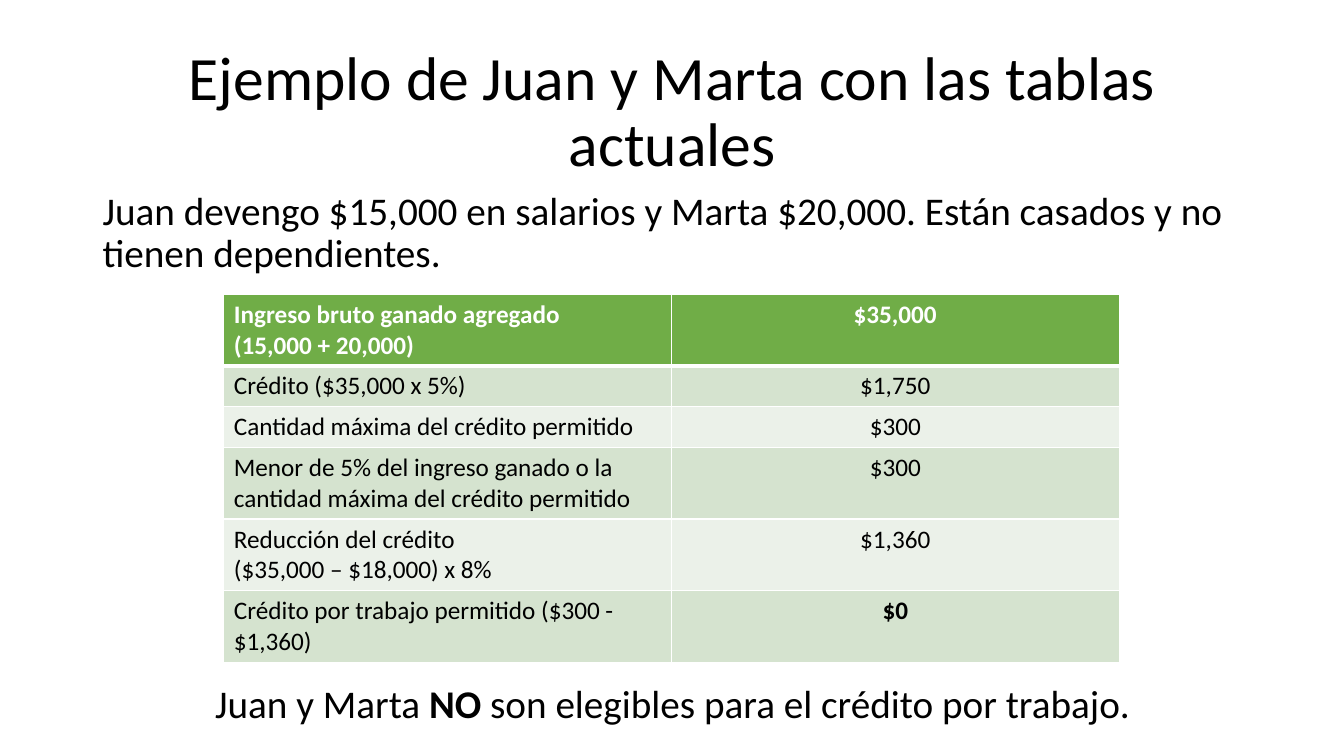
import pptx
import pptx.dml.color
import pptx.enum.text
import pptx.oxml.ns
import pptx.util
from lxml import etree
from pptx.util import Inches

COLORS = {
    "text": "000000",
    "white": "FFFFFF",
    "header": "70AD47",
    "odd": "D5E3CF",
    "even": "EBF1E9",
}
FONT = "Calibri"
LEFT = pptx.enum.text.PP_ALIGN.LEFT
CENTER = pptx.enum.text.PP_ALIGN.CENTER
TOP = pptx.enum.text.MSO_ANCHOR.TOP
MIDDLE = pptx.enum.text.MSO_ANCHOR.MIDDLE

ROWS = [
    (["Ingreso bruto ganado agregado", "(15,000 + 20,000)"], "$35,000"),
    (["Crédito ($35,000 x 5%)"], "$1,750"),
    (["Cantidad máxima del crédito permitido"], "$300"),
    (["Menor de 5% del ingreso ganado o la cantidad máxima del crédito permitido"], "$300"),
    (["Reducción del crédito", "($35,000 – $18,000) x 8%"], "$1,360"),
    (["Crédito por trabajo permitido ($300 - $1,360)"], "$0"),
]


def rgb(name):
    return pptx.dml.color.RGBColor.from_string(COLORS[name])


def write(para, text, size=28, color="text", bold=False, align=LEFT, spacing=1.0):
    para.alignment = align
    para.line_spacing = spacing
    span = para.add_run()
    span.text = text
    span.font.name = FONT
    span.font.size = pptx.util.Pt(size)
    span.font.bold = bold
    span.font.color.rgb = rgb(color)


def add_text(page, left, top, width, height, spans, anchor=TOP, **style):
    """Place one paragraph made of (text, bold) spans in a box."""
    box = page.shapes.add_textbox(Inches(left), Inches(top), Inches(width), Inches(height))
    frame = box.text_frame
    frame.word_wrap = True
    frame.vertical_anchor = anchor
    for text, bold in spans:
        write(frame.paragraphs[0], text, bold=bold, spacing=0.9, **style)


def add_borders(cell, top=1, bottom=1):
    properties = cell._tc.get_or_add_tcPr()
    for side, points in (("L", 1), ("R", 1), ("T", top), ("B", bottom)):
        line = etree.SubElement(properties, pptx.oxml.ns.qn(f"a:ln{side}"),
                                w=str(pptx.util.Pt(points)))
        fill = etree.SubElement(line, pptx.oxml.ns.qn("a:solidFill"))
        etree.SubElement(fill, pptx.oxml.ns.qn("a:srgbClr"), val=COLORS["white"])


def add_credit_table(page, left, top, width):
    line_height, padding = 0.305, 0.1
    heights = [line_height * (2 if len(label) > 1 or len(label[0]) > 40 else 1) + padding
               for label, amount in ROWS]
    frame = page.shapes.add_table(len(ROWS), 2, Inches(left), Inches(top),
                                  Inches(width), Inches(sum(heights)))
    table = frame.table
    for column in table.columns:
        column.width = Inches(width / 2)
    for index, (label, amount) in enumerate(ROWS):
        table.rows[index].height = Inches(heights[index])
        header, total = index == 0, index == len(ROWS) - 1
        color = "white" if header else "text"
        background = "header" if header else "odd" if index % 2 else "even"
        for column, lines in enumerate((label, [amount])):
            cell = table.cell(index, column)
            add_borders(cell, top=3 if index == 1 else 1, bottom=3 if header else 1)
            cell.fill.solid()
            cell.fill.fore_color.rgb = rgb(background)
            for number, text in enumerate(lines):
                frame = cell.text_frame
                para = frame.add_paragraph() if number else frame.paragraphs[0]
                write(para, text, size=18, color=color,
                      bold=header or (total and column == 1),
                      align=CENTER if column else LEFT)


def add_example_page(deck):
    page = deck.slides.add_slide(deck.slide_layouts[6])
    left, width = 0.92, 11.5
    # Title
    add_text(page, left, 0.4, width, 1.45,
             [("Ejemplo de Juan y Marta con las tablas actuales", False)],
             anchor=MIDDLE, size=44, align=CENTER)
    # Facts of the example
    add_text(page, left, 1.85, width, 0.95,
             [("Juan devengo $15,000 en salarios y Marta $20,000. "
               "Están casados y no tienen dependientes.", False)])
    # Credit calculation
    add_credit_table(page, 2.22, 2.92, 8.88)
    # Conclusion
    add_text(page, left, 6.74, width, 0.55,
             [("Juan y Marta ", False), ("NO ", True),
              ("son elegibles para el crédito por trabajo.", False)], align=CENTER)


def main():
    deck = pptx.Presentation()
    deck.slide_width, deck.slide_height = Inches(13.33), Inches(7.5)
    add_example_page(deck)
    deck.save("out.pptx")


if __name__ == "__main__":
    main()
